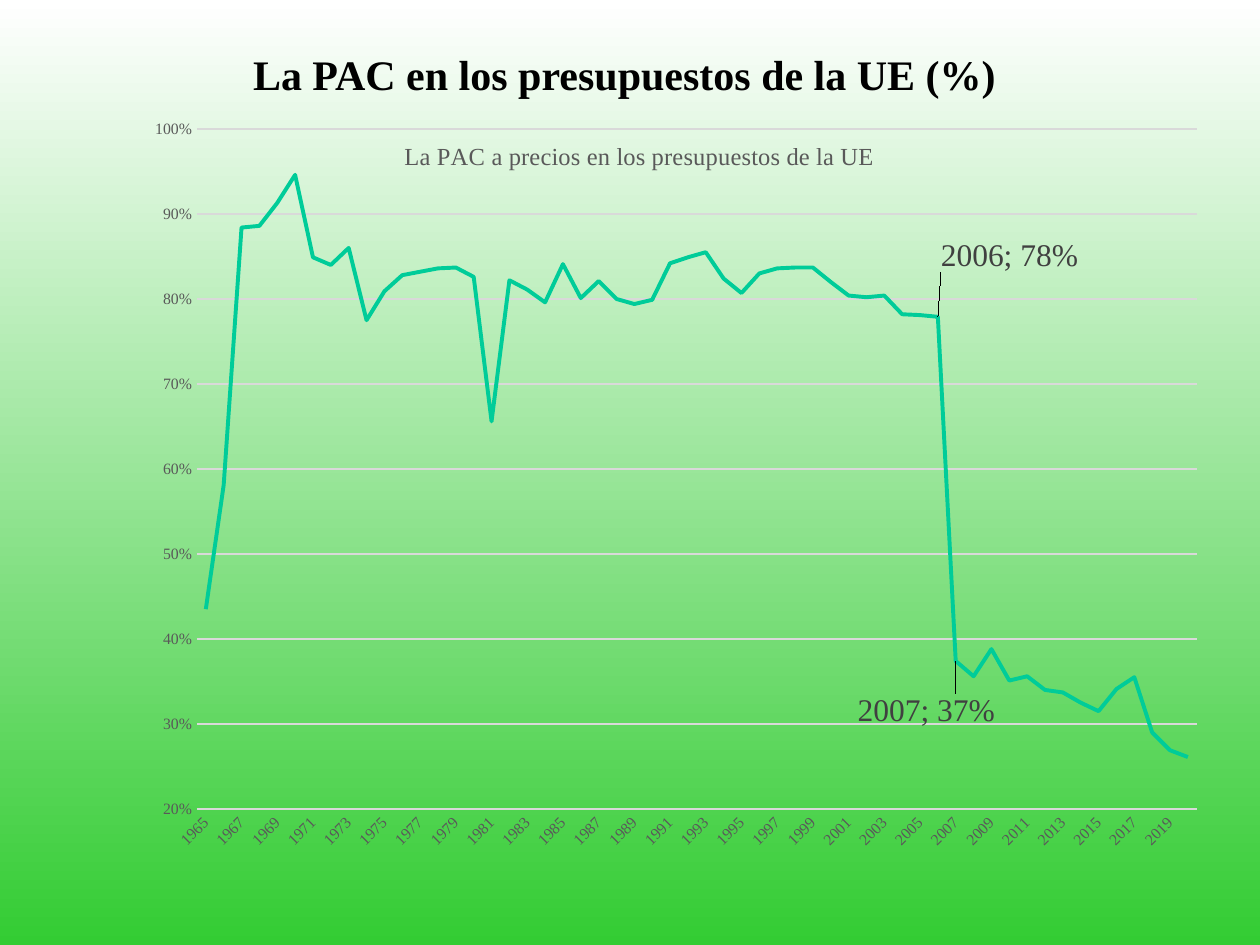
import pptx
import pptx.util
import pptx.chart.data
import pptx.dml.color
import pptx.enum.chart
import pptx.enum.text
import pptx.oxml
import pptx.oxml.ns

FONT = "Times New Roman"
BLACK, AXIS_TEXT, LABEL_TEXT = "000000", "595959", "404040"
GRID, SERIES = "D9D9D9", "00CC99"
BACKGROUND = ("FFFFFF", "33CC33")

TITLE = "La PAC en los presupuestos de la UE (%)"
CHART_TITLE = "La PAC a precios en los presupuestos de la UE"
TITLE_BOX = (34, 16, 1181, 115)
CHART_BOX = (34, 106, 1201, 804)
PLOT_BOX = (197, 129, 1000, 680)
CHART_TITLE_AT = (400, 136)

FIRST_YEAR = 1965
SHARES = [
    0.435, 0.581, 0.884, 0.886, 0.913, 0.946, 0.849, 0.840, 0.860, 0.775,
    0.809, 0.828, 0.832, 0.836, 0.837, 0.826, 0.656, 0.822, 0.811, 0.796,
    0.841, 0.801, 0.821, 0.800, 0.794, 0.799, 0.842, 0.849, 0.855, 0.824,
    0.807, 0.830, 0.836, 0.837, 0.837, 0.820, 0.804, 0.802, 0.804, 0.782,
    0.781, 0.779, 0.374, 0.356, 0.388, 0.351, 0.356, 0.340, 0.337, 0.325,
    0.315, 0.341, 0.355, 0.290, 0.269, 0.261,
]
# Year: shift of its label in px from the usual place right of the point
LABEL_SHIFTS = {2006: (-2, -61), 2007: (-103, 50)}

C15 = "http://schemas.microsoft.com/office/drawing/2012/chart"
qn = pptx.oxml.ns.qn


def px(count):
    return pptx.util.Emu(round(count * 914400 / 126))


def rgb(value):
    return pptx.dml.color.RGBColor.from_string(value)


def style(font, size, color, bold=False):
    font.name, font.size, font.bold = FONT, pptx.util.Pt(size), bold
    font.color.rgb = rgb(color)


def draw_line(line, color, width):
    line.color.rgb = rgb(color)
    line.width = pptx.util.Pt(width)


def chart_xml(text):
    """Parse a chart element whose c, a and c15 prefixes are declared here."""
    head, mark, tail = text.partition(">")
    if head.endswith("/"):
        head, mark = head[:-1], "/>"
    names = pptx.oxml.ns.nsdecls("c", "a") + f' xmlns:c15="{C15}"'
    return pptx.oxml.parse_xml(f"{head} {names}{mark}{tail}")


def set_layout(parent, index, x, y, size=None, inner=False):
    """Give a chart part a manual layout in px, as a share of the chart."""
    for old in parent.findall(qn("c:layout")):
        parent.remove(old)
    width, height = CHART_BOX[2:]
    target = '<c:layoutTarget val="inner"/>' if inner else ""
    modes = '<c:xMode val="edge"/><c:yMode val="edge"/>' if parent.tag != qn("c:dLbl") else ""
    shares = [("x", x / width), ("y", y / height)]
    if size:
        shares += [("w", size[0] / width), ("h", size[1] / height)]
    values = "".join(f'<c:{name} val="{share:.4f}"/>' for name, share in shares)
    parent.insert(index, chart_xml(
        f"<c:layout><c:manualLayout>{target}{modes}{values}</c:manualLayout></c:layout>"))


def add_title(page):
    title = page.shapes.title
    title.left, title.top, title.width, title.height = map(px, TITLE_BOX)
    frame = title.text_frame
    frame.word_wrap = True
    frame.vertical_anchor = pptx.enum.text.MSO_ANCHOR.MIDDLE
    para = frame.paragraphs[0]
    para.alignment = pptx.enum.text.PP_ALIGN.CENTER
    span = para.add_run()
    span.text = TITLE
    style(span.font, 24, BLACK, bold=True)


def add_chart(page):
    data = pptx.chart.data.CategoryChartData(number_format="0%")
    data.categories = [str(FIRST_YEAR + i) for i in range(len(SHARES))]
    data.add_series("Series 1", SHARES)
    chart = page.shapes.add_chart(
        pptx.enum.chart.XL_CHART_TYPE.LINE, *map(px, CHART_BOX), data).chart
    style(chart.font, 10, BLACK)
    chart.has_legend = False
    chart.plots[0].vary_by_categories = False
    left, top = CHART_BOX[:2]
    set_layout(chart._chartSpace.chart.plotArea, 0, PLOT_BOX[0] - left,
               PLOT_BOX[1] - top, PLOT_BOX[2:], inner=True)
    return chart


def add_chart_title(chart):
    chart.has_title = True
    span = chart.chart_title.text_frame.paragraphs[0].add_run()
    span.text = CHART_TITLE
    style(span.font, 14, AXIS_TEXT)
    title = chart.chart_title._element
    set_layout(title, 1, CHART_TITLE_AT[0] - CHART_BOX[0], CHART_TITLE_AT[1] - CHART_BOX[1])
    for old in title.findall(qn("c:overlay")):
        title.remove(old)
    title.insert(2, chart_xml('<c:overlay val="1"/>'))


def format_axes(chart):
    years, shares = chart.category_axis, chart.value_axis
    for axis in (years, shares):
        axis.major_tick_mark = axis.minor_tick_mark = pptx.enum.chart.XL_TICK_MARK.NONE
        style(axis.tick_labels.font, 9, AXIS_TEXT)
    draw_line(years.format.line, GRID, 0.75)
    years._element.find(qn("c:txPr")).find(qn("a:bodyPr")).set("rot", "-2700000")
    years._element.find(qn("c:noMultiLvlLbl")).addprevious(
        chart_xml('<c:tickLblSkip val="2"/>'))
    shares.minimum_scale, shares.maximum_scale, shares.major_unit = 0.2, 1, 0.1
    shares.tick_labels.number_format = "0%"
    shares.tick_labels.number_format_is_linked = False
    shares.format.line.fill.background()
    draw_line(shares.major_gridlines.format.line, GRID, 0.75)


def format_series(series):
    series.smooth = False
    draw_line(series.format.line, SERIES, 2.25)
    series.marker.style = pptx.enum.chart.XL_MARKER_STYLE.NONE
    labels = series.data_labels
    labels.show_value = False
    for year, shift in LABEL_SHIFTS.items():
        label = series.points[year - FIRST_YEAR].data_label
        style(label.font, 18, LABEL_TEXT)
        label.position = pptx.enum.chart.XL_LABEL_POSITION.RIGHT
        element = label._dLbl
        set_layout(element, 1, *shift)
        for flag in ("c:showVal", "c:showCatName"):
            element.find(qn(flag)).set("val", "1")
        element.append(chart_xml("<c:separator>; </c:separator>"))
    labels._element.append(chart_xml(
        '<c:extLst><c:ext uri="{CE6537A1-D6FC-4f65-9D91-7224C49458BB}">'
        '<c15:showLeaderLines val="1"/></c:ext></c:extLst>'))


def main():
    deck = pptx.Presentation()
    deck.slide_width, deck.slide_height = px(1260), px(945)
    page = deck.slides.add_slide(deck.slide_layouts.get_by_name("Title Only"))
    fill = page.background.fill
    fill.gradient()
    fill.gradient_angle = 270
    for stop, color in zip(fill.gradient_stops, BACKGROUND):
        stop.color.rgb = rgb(color)
    add_title(page)
    chart = add_chart(page)
    add_chart_title(chart)
    format_axes(chart)
    format_series(chart.plots[0].series[0])
    deck.save("out.pptx")


if __name__ == "__main__":
    main()
